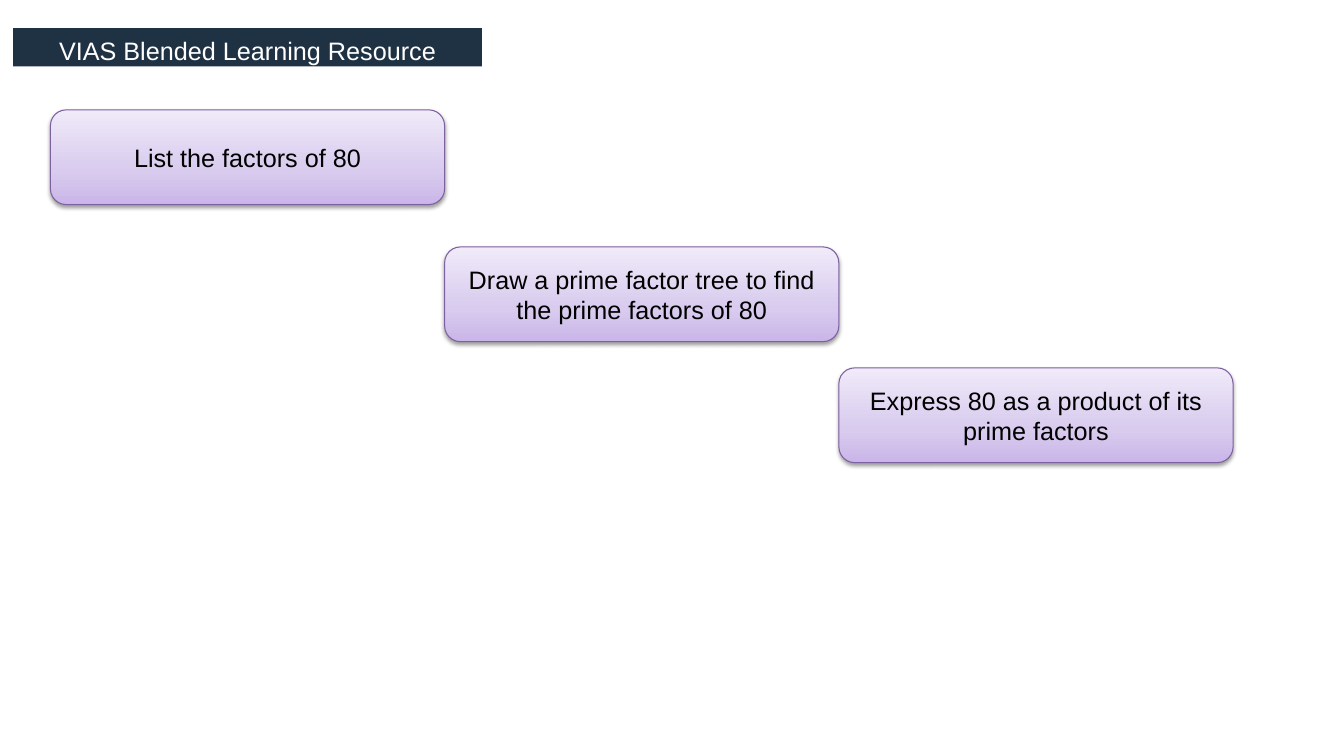
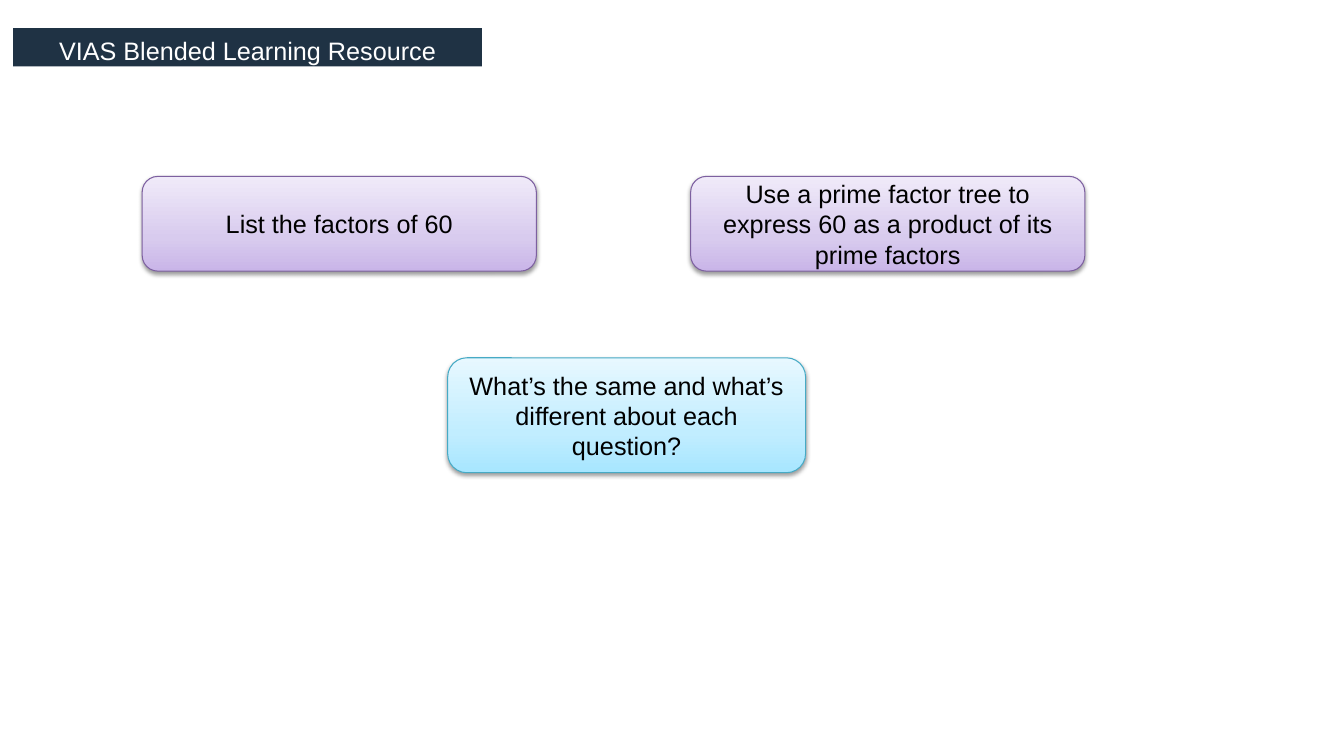
from lxml import etree
from pptx import Presentation
from pptx.dml.color import RGBColor
from pptx.enum.shapes import MSO_SHAPE as Shape
from pptx.enum.text import MSO_ANCHOR as Anchor, MSO_AUTO_SIZE as AutoSize, PP_ALIGN as Align
from pptx.oxml import parse_xml
from pptx.oxml.ns import nsdecls, qn
from pptx.util import Pt

PX = 9144  # EMU per px, 100 px to the inch
FONT = "Arial"
TEXT_SIZE = Pt(18)
TITLE = "VIAS Blended Learning Resource"

NAVY = RGBColor(0x1F, 0x32, 0x44)
WHITE = RGBColor(0xFF, 0xFF, 0xFF)
BLACK = RGBColor(0x00, 0x00, 0x00)

# Card styles: outline, then gradient colours from bottom to top
PURPLE = (RGBColor(0x7D, 0x60, 0xA0),
          (RGBColor(0xC9, 0xB5, 0xE8), RGBColor(0xD8, 0xCB, 0xEE), RGBColor(0xF0, 0xEA, 0xF9)))
BLUE = (RGBColor(0x46, 0xAA, 0xC5),
        (RGBColor(0xA7, 0xE6, 0xFF), RGBColor(0xC1, 0xED, 0xFF), RGBColor(0xE7, 0xF8, 0xFF)))
GRADIENT_STOPS = (0, 35, 100)
CARD_WIDTH, CARD_HEIGHT = 391, 94


def place(shape, left, top, width, height):
    shape.left, shape.top = left * PX, top * PX
    shape.width, shape.height = width * PX, height * PX


def write(shape, text, colour, anchor):
    frame = shape.text_frame
    frame.text = text
    frame.word_wrap = True
    frame.auto_size = AutoSize.NONE
    frame.vertical_anchor = anchor
    para = frame.paragraphs[0]
    para.alignment = Align.CENTER
    para.font.name = FONT
    para.font.size = TEXT_SIZE
    para.font.color.rgb = colour


def add_page(deck):
    """Add a page with the navy title band."""
    page = deck.slides.add_slide(deck.slide_layouts[5])
    band = page.shapes.title
    place(band, 13, 28, 465, 38)
    band.fill.solid()
    band.fill.fore_color.rgb = NAVY
    write(band, TITLE, WHITE, Anchor.TOP)
    band.text_frame.margin_top = 7 * PX
    band.text_frame.margin_bottom = 0
    return page


def fill_gradient(shape, colours):
    shape.fill.gradient()
    shape.fill.gradient_angle = 90
    stops = shape.element.spPr.find(".//" + qn("a:gsLst"))
    for stop in list(stops):
        stops.remove(stop)
    for percent, colour in zip(GRADIENT_STOPS, colours):
        stop = etree.SubElement(stops, qn("a:gs"), pos=str(percent * 1000))
        etree.SubElement(stop, qn("a:srgbClr"), val=str(colour))


def add_shadow(shape):
    shape.shadow.inherit = False
    effects = shape.element.spPr.find(qn("a:effectLst"))
    effects.append(parse_xml(
        f'<a:outerShdw {nsdecls("a")} blurRad="{Pt(3.1)}" dist="{Pt(1.6)}" dir="5400000" rotWithShape="0">'
        '<a:srgbClr val="000000"><a:alpha val="38000"/></a:srgbClr></a:outerShdw>'))


def add_card(page, text, left, top, width=CARD_WIDTH, height=CARD_HEIGHT, style=PURPLE):
    outline, colours = style
    card = page.shapes.add_shape(Shape.ROUNDED_RECTANGLE, 0, 0, 0, 0)
    place(card, left, top, width, height)
    fill_gradient(card, colours)
    card.line.color.rgb = outline
    card.line.width = Pt(0.75)
    add_shadow(card)
    write(card, text, BLACK, Anchor.MIDDLE)


def main():
    deck = Presentation()
    deck.slide_width, deck.slide_height = 1333 * PX, 750 * PX

    # Three steps, each starting where the last one ends
    steps = add_page(deck)
    for index, (top, text) in enumerate((
            (109, "List the factors of 80"),
            (245, "Draw a prime factor tree to find the prime factors of 80"),
            (365, "Express 80 as a product of its prime factors"))):
        add_card(steps, text, 50 + index * CARD_WIDTH, top)

    # Two questions to compare
    comparison = add_page(deck)
    add_card(comparison, "List the factors of 60", 141, 175)
    add_card(comparison, "Use a prime factor tree to express 60 as a product of its prime factors",
             685, 175)
    add_card(comparison, "What’s the same and what’s different about each question?",
             444, 355, 355, 114, BLUE)

    deck.save("out.pptx")


if __name__ == "__main__":
    main()
